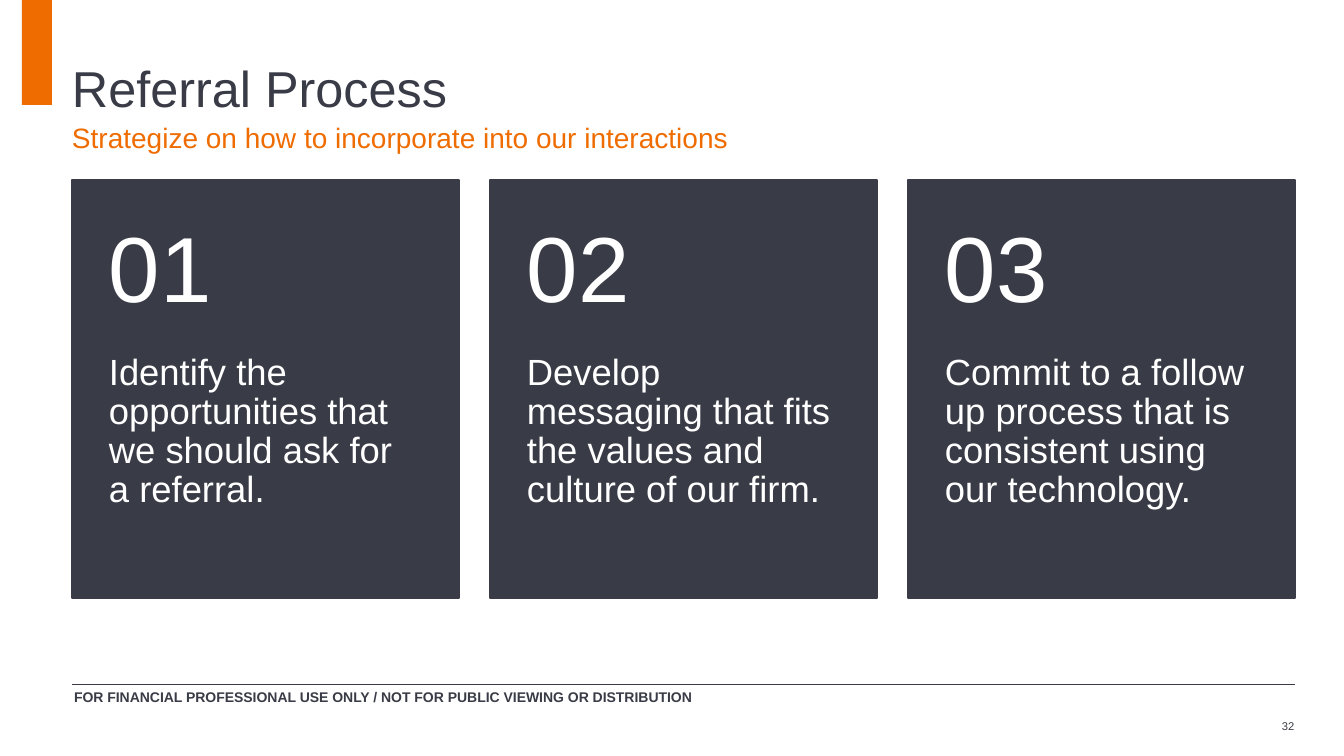
import pptx
import pptx.dml.color
import pptx.enum.shapes
import pptx.enum.text
import pptx.oxml
import pptx.util

RGBColor = pptx.dml.color.RGBColor
SLATE = RGBColor(0x39, 0x3C, 0x46)
ORANGE = RGBColor(0xEF, 0x6C, 0x00)
WHITE = RGBColor(0xFF, 0xFF, 0xFF)

CARD_LEFT, CARD_TOP, CARD_WIDTH, CARD_HEIGHT, CARD_STEP = 72, 180, 387, 418, 418
STEPS = [
    "Identify the opportunities that we should ask for a referral.",
    "Develop messaging that fits the values and culture of our firm.",
    "Commit to a follow up process that is consistent using our technology.",
]


def px(count):
    """Turn pixels, 100.8 to the inch, into EMU."""
    return pptx.util.Emu(round(count * 914400 / 100.8))


class SlideBuilder:
    font_name = "Arial"

    def __init__(self, page):
        self.page = page

    def fill_frame(self, frame, paragraphs, insets):
        """Write (text, size, colour, options) paragraphs; insets are left, top, right."""
        frame.word_wrap = True
        frame.auto_size = pptx.enum.text.MSO_AUTO_SIZE.NONE
        frame.vertical_anchor = pptx.enum.text.MSO_ANCHOR.TOP
        frame.margin_left, frame.margin_top, frame.margin_right = map(px, insets)
        frame.margin_bottom = 0
        for index, (text, size, colour, options) in enumerate(paragraphs):
            para = frame.add_paragraph() if index else frame.paragraphs[0]
            para.text = text
            para.alignment = pptx.enum.text.PP_ALIGN.LEFT
            if "before" in options:
                para.space_before = pptx.util.Pt(options["before"])
            if "spacing" in options:
                para.line_spacing = options["spacing"]
            para.font.name = self.font_name
            para.font.size = pptx.util.Pt(size)
            para.font.color.rgb = colour
            para.font.bold = options.get("bold", False)

    def title(self, left, top, width, height, paragraphs, insets):
        box = self.page.shapes.title
        box.left, box.top, box.width, box.height = map(px, (left, top, width, height))
        self.fill_frame(box.text_frame, paragraphs, insets)

    def text(self, left, top, width, height, paragraphs, insets):
        box = self.page.shapes.add_textbox(*map(px, (left, top, width, height)))
        self.fill_frame(box.text_frame, paragraphs, insets)

    def rectangle(self, left, top, width, height, colour, line_width=0):
        box = self.page.shapes.add_shape(
            pptx.enum.shapes.MSO_SHAPE.RECTANGLE, *map(px, (left, top, width, height)))
        box.shadow.inherit = False
        box.fill.solid()
        box.fill.fore_color.rgb = colour
        if line_width:
            box.line.color.rgb = colour
            box.line.width = pptx.util.Pt(line_width)
        else:
            box.line.fill.background()

    def rule(self, left, right, y, colour, line_width):
        line = self.page.shapes.add_connector(
            pptx.enum.shapes.MSO_CONNECTOR.STRAIGHT, *map(px, (left, y, right, y)))
        line.line.color.rgb = colour
        line.line.width = pptx.util.Pt(line_width)
        line._element.spPr.append(pptx.oxml.parse_xml(
            '<a:effectLst xmlns:a="http://schemas.openxmlformats.org/drawingml/2006/main"/>'))

    def card(self, number, text):
        left = CARD_LEFT + (number - 1) * CARD_STEP
        self.rectangle(left, CARD_TOP, CARD_WIDTH, CARD_HEIGHT, SLATE, line_width=2)
        self.text(left + 1, 199, 384, 300, [
            (f"{number:02}", 66, WHITE, {}),
            (text, 26, WHITE, {"before": 24, "spacing": 0.89}),
        ], insets=(36, 11, 42))


def main():
    deck = pptx.Presentation()
    deck.slide_width, deck.slide_height = px(1344), px(756)
    slide = SlideBuilder(deck.slides.add_slide(deck.slide_layouts[5]))

    slide.rectangle(22, 0, 30, 105, ORANGE)
    slide.rule(72, 1295, 684, SLATE, 0.5)
    slide.title(71, 44, 1203, 111, [
        ("Referral Process", 36, SLATE, {}),
        ("Strategize on how to incorporate into our interactions", 20, ORANGE,
         {"before": 2}),
    ], insets=(1, 13, 0))
    for number, text in enumerate(STEPS, 1):
        slide.card(number, text)
    slide.text(69, 688, 658, 26, [
        ("FOR FINANCIAL PROFESSIONAL USE ONLY / NOT FOR PUBLIC VIEWING OR DISTRIBUTION",
         10, SLATE, {"bold": True}),
    ], insets=(5, 0, 0))
    slide.text(1267, 719, 33, 15, [("32", 8, SLATE, {})], insets=(15, 0, 0))

    deck.save("out.pptx")


if __name__ == "__main__":
    main()
